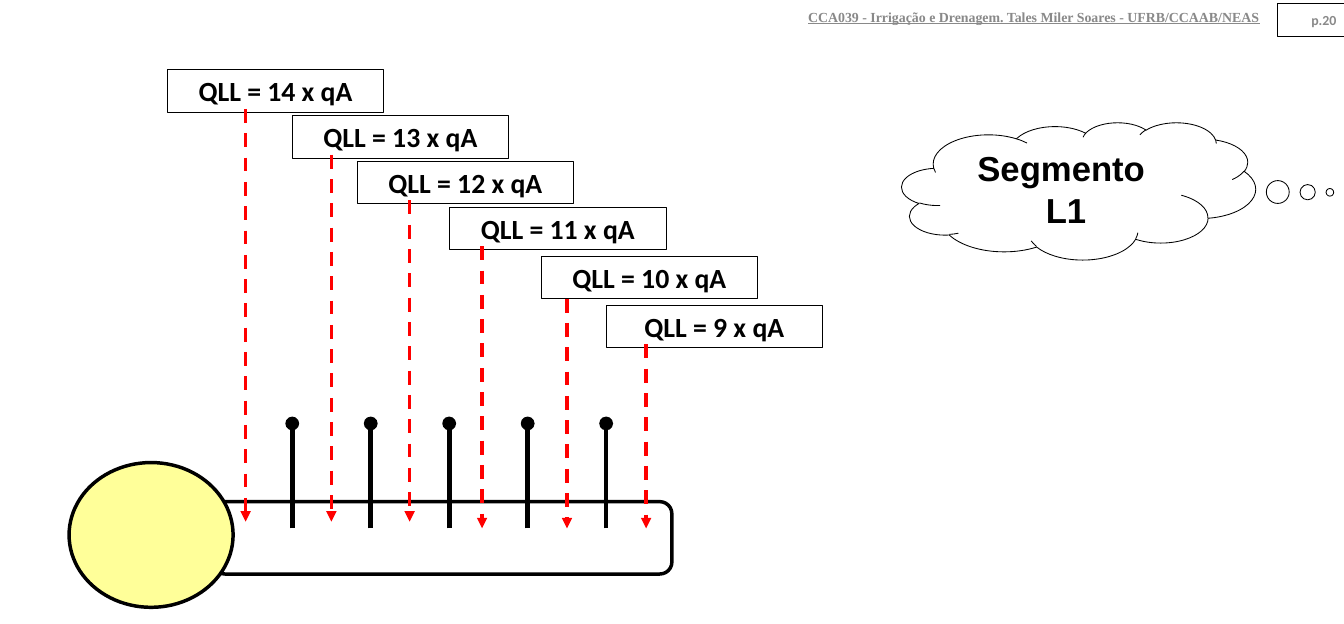
from pptx import Presentation
from pptx.dml.color import RGBColor
from pptx.enum.dml import MSO_LINE
from pptx.enum.shapes import MSO_CONNECTOR, MSO_SHAPE
from pptx.enum.text import MSO_ANCHOR, PP_ALIGN
from pptx.oxml.ns import qn
from pptx.util import Inches, Pt
from lxml import etree

RECT, ROUND, OVAL, CLOUD = (MSO_SHAPE.RECTANGLE, MSO_SHAPE.ROUNDED_RECTANGLE,
                            MSO_SHAPE.OVAL, MSO_SHAPE.CLOUD_CALLOUT)
STRAIGHT, DASH = MSO_CONNECTOR.STRAIGHT, MSO_LINE.DASH
TOP, MIDDLE = MSO_ANCHOR.TOP, MSO_ANCHOR.MIDDLE
CENTER, RIGHT = PP_ALIGN.CENTER, PP_ALIGN.RIGHT
COLORS = {k: RGBColor.from_string(v) for k, v in {
    "black": "000000", "gray": "898989", "red": "FF0000", "yellow": "FFFF99"}.items()}

prs = Presentation()
prs.slide_width, prs.slide_height = Inches(41 / 2.54), Inches(7.5)  # 41 cm wide
s = prs.slides.add_slide(prs.slide_layouts[6])


def add_box(kind, x, y, w, h, lines=(), size=12, font="Calibri", color="black",
            align=CENTER, anchor=TOP, weight=0.75, fill=None):
    """Add an outlined shape, or a text box if kind is None, with bold lines of text."""
    box = [Inches(v) for v in (x, y, w, h)]
    if kind is None:
        sp = s.shapes.add_textbox(*box)
    else:
        sp = s.shapes.add_shape(kind, *box)
        sp.shadow.inherit = False
        sp.line.color.rgb = COLORS["black"]
        sp.line.width = Pt(weight)
        if fill:
            sp.fill.solid()
            sp.fill.fore_color.rgb = COLORS[fill]
        else:
            sp.fill.background()
    tf = sp.text_frame
    tf.word_wrap = True
    tf.vertical_anchor = anchor
    for i, text in enumerate(lines):
        p = tf.add_paragraph() if i else tf.paragraphs[0]
        p.text = text
        p.alignment = align
        p.font.name, p.font.size, p.font.bold = font, Pt(size), True
        p.font.color.rgb = COLORS[color]
    return sp


def add_vertical(x, y1, y2, color, weight, end, dash=None):
    """Add a vertical line with an end mark at y2."""
    c = s.shapes.add_connector(STRAIGHT, Inches(x), Inches(y1), Inches(x), Inches(y2))
    c.line.color.rgb = COLORS[color]
    c.line.width = Pt(weight)
    if dash:
        c.line.dash_style = dash
    spPr = c._element.spPr
    etree.SubElement(spPr.find(qn("a:ln")), qn("a:tailEnd"), type=end)
    etree.SubElement(spPr, qn("a:effectLst"))


# Header
header = add_box(None, 7.06, 0, 8.17, 0.4,
                 ["CCA039 - Irrigação e Drenagem. Tales Miler Soares - UFRB/CCAAB/NEAS"],
                 font="Times New Roman", color="gray", align=RIGHT, anchor=MIDDLE)
header.text_frame.paragraphs[0].font.underline = True
add_box(RECT, 15.34, 0.04, 0.81, 0.4, ["p.20"], color="gray", align=RIGHT, anchor=MIDDLE)

# Lateral line with its emitters, and the supply pipe at its left end
add_box(ROUND, 2.56, 6.03, 5.51, 0.87, weight=3)
for i in range(5):
    add_vertical(3.51 + i * 3.77 / 4, 6.35, 5.09, "black", 4, "oval")
add_box(OVAL, 0.83, 5.56, 1.97, 1.74, weight=3, fill="yellow")

# Flow in each stretch: emitters served, box left and top, arrow x, start and end
flows = [
    (14, 2.01, 0.84, 2.95, 1.31, 6.27),
    (13, 3.51, 1.39, 3.98, 1.86, 6.27),
    (12, 4.29, 1.94, 4.92, 2.41, 6.27),
    (11, 5.4, 2.49, 5.79, 2.96, 6.35),
    (10, 6.5, 3.08, 6.81, 3.59, 6.35),
    (9, 7.28, 3.67, 7.76, 4.14, 6.35),
]
for count, left, top, x, start, end in flows:
    add_box(RECT, left, top, 2.6, 0.51, [f"QLL = {count} x qA"], size=24)
    add_vertical(x, start, end, "red", 3, "triangle", DASH)

# Segment label
cloud = add_box(CLOUD, 10.83, 1.47, 4.25, 1.65, ["Segmento ", "L1"], size=30, font="Arial")
cloud.adjustments[0], cloud.adjustments[1] = 0.71, 0.01

prs.save("out.pptx")
